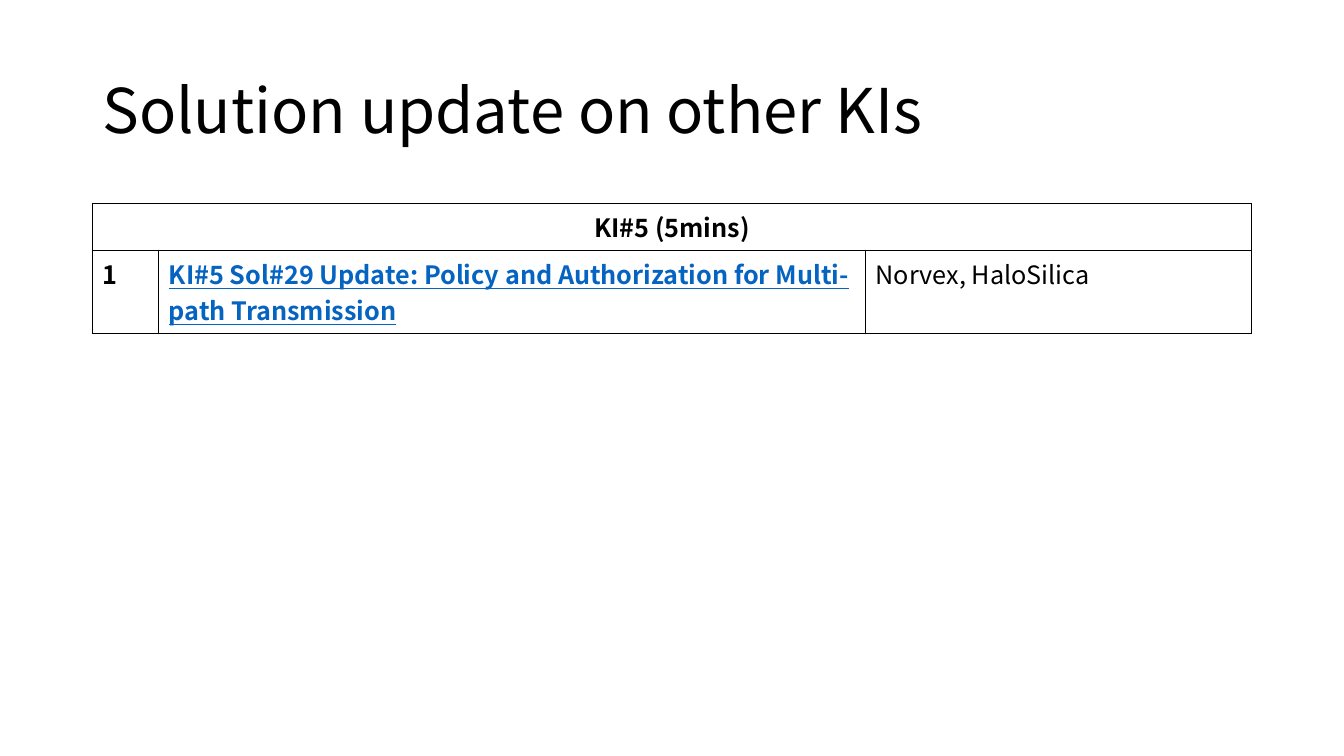
import pptx
import pptx.util
import pptx.dml.color
import pptx.enum.text
import pptx.oxml
from dataclasses import dataclass
from lxml import etree

TITLE = "Solution update on other KIs"
SECTION = "KI#5 (5mins)"
SOLUTIONS = [
    ("1", "KI#5 Sol#29 Update: Policy and Authorization for Multi-path Transmission", "Norvex, HaloSilica"),
]
COLUMN_WIDTHS = (0.66, 7.01, 3.83)
ROW_HEIGHT = 0.41
SLIDE_WIDTH, SLIDE_HEIGHT = 13.33, 7.5
CONTENT_WIDTH = sum(COLUMN_WIDTHS)
MARGIN = (SLIDE_WIDTH - CONTENT_WIDTH) / 2
TITLE_TOP, TITLE_HEIGHT, TABLE_TOP = 0.4, 1.45, 2.02


@dataclass(frozen=True)
class Theme:
    font: str = "Noto Sans CJK SC"
    text: str = "000000"
    link: str = "0563C1"
    background: str = "FFFFFF"
    title_size: int = 44
    table_size: int = 18
    border: int = 1


THEME = Theme()
Inches = pptx.util.Inches
Color = pptx.dml.color.RGBColor.from_string
Align = pptx.enum.text.PP_ALIGN


def write(frame, text, size, color=THEME.text, bold=False, underline=False, align=Align.LEFT):
    paragraph = frame.paragraphs[0]
    paragraph.text = text
    paragraph.alignment = align
    font = paragraph.font
    font.name = THEME.font
    font.size = pptx.util.Pt(size)
    font.color.rgb = Color(color)
    font.bold = bold
    font.underline = underline
    return paragraph


def style_cell(cell):
    cell.fill.solid()
    cell.fill.fore_color.rgb = Color(THEME.background)
    properties = cell._tc.get_or_add_tcPr()
    for position, side in enumerate(("lnL", "lnR", "lnT", "lnB")):
        line = etree.Element(pptx.oxml.ns.qn(f"a:{side}"), w=str(pptx.util.Pt(THEME.border)))
        fill = etree.SubElement(line, pptx.oxml.ns.qn("a:solidFill"))
        etree.SubElement(fill, pptx.oxml.ns.qn("a:srgbClr"), val=THEME.text)
        properties.insert(position, line)


def add_title(slide):
    title = slide.shapes.title
    title.left, title.top = Inches(MARGIN), Inches(TITLE_TOP)
    title.width, title.height = Inches(CONTENT_WIDTH), Inches(TITLE_HEIGHT)
    title.text_frame.vertical_anchor = pptx.enum.text.MSO_ANCHOR.MIDDLE
    write(title.text_frame, TITLE, THEME.title_size).line_spacing = 0.9


def add_solutions(slide):
    row_count = len(SOLUTIONS) + 1
    table = slide.shapes.add_table(
        row_count, len(COLUMN_WIDTHS), Inches(MARGIN), Inches(TABLE_TOP),
        Inches(CONTENT_WIDTH), Inches(ROW_HEIGHT * row_count),
    ).table
    for column, width in zip(table.columns, COLUMN_WIDTHS):
        column.width = Inches(width)
    for cell in table.iter_cells():
        style_cell(cell)
    header = table.cell(0, 0)
    header.merge(table.cell(0, len(COLUMN_WIDTHS) - 1))
    write(header.text_frame, SECTION, THEME.table_size, bold=True, align=Align.CENTER)
    column_styles = ({"bold": True}, {"bold": True, "underline": True, "color": THEME.link}, {})
    for row, solution in enumerate(SOLUTIONS, 1):
        for column, (text, style) in enumerate(zip(solution, column_styles)):
            write(table.cell(row, column).text_frame, text, THEME.table_size, **style)


def main():
    presentation = pptx.Presentation()
    presentation.slide_width = Inches(SLIDE_WIDTH)
    presentation.slide_height = Inches(SLIDE_HEIGHT)
    slide = presentation.slides.add_slide(presentation.slide_layouts.get_by_name("Title Only"))
    add_title(slide)
    add_solutions(slide)
    presentation.save("out.pptx")


if __name__ == "__main__":
    main()
